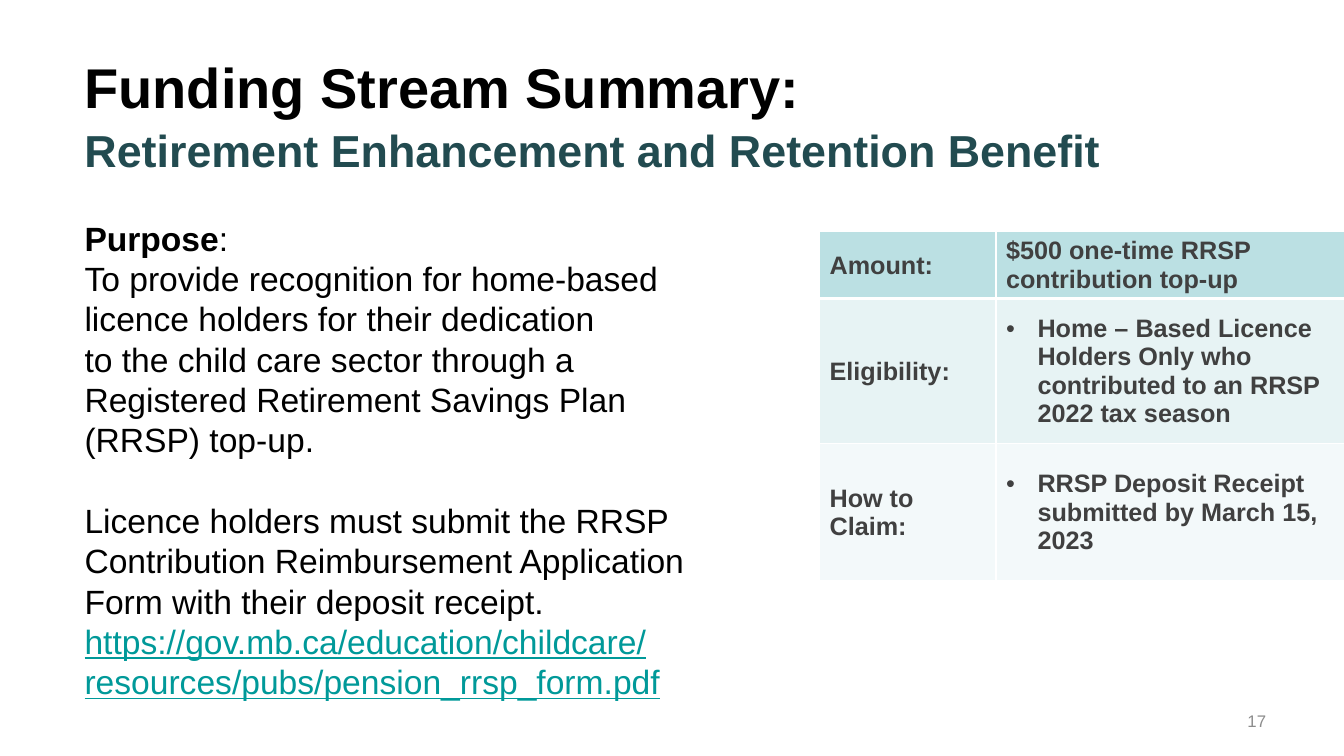
from lxml import etree
from pptx import Presentation
from pptx.dml.color import RGBColor
from pptx.enum.text import MSO_ANCHOR, PP_ALIGN
from pptx.oxml.ns import qn
from pptx.util import Pt

MIDDLE, TOP = MSO_ANCHOR.MIDDLE, MSO_ANCHOR.TOP
LEFT, RIGHT = PP_ALIGN.LEFT, PP_ALIGN.RIGHT
BLANK_LAYOUT = 6
COLORS = {
    "black": "000000",
    "heading": "224B50",
    "link": "009999",
    "table_text": "404040",
    "page_number": "8C8C8C",
    "border": "FFFFFF",
    "top_row": "BBE0E3",
    "odd_row": "E7F3F4",
    "even_row": "F3F9FA",
}


def color(name):
    return RGBColor.from_string(COLORS[name])


def add_text(paragraph, text, size=24, fill="black", bold=False, underline=False):
    """Append text to a paragraph, turning newlines into line breaks."""
    for index, line in enumerate(text.split("\n")):
        if index:
            paragraph.add_line_break()
        if line:
            run = paragraph.add_run()
            run.text = line
            run.font.name = "Arial"
            run.font.size = Pt(size)
            run.font.bold = bold
            run.font.underline = underline
            run.font.color.rgb = color(fill)


def add_bullet(paragraph, indent):
    properties = paragraph._p.get_or_add_pPr()
    properties.set("marL", str(Pt(indent)))
    properties.set("indent", str(-Pt(indent)))
    font = etree.SubElement(properties, qn("a:buFont"))
    font.set("typeface", "Arial")
    etree.SubElement(properties, qn("a:buChar")).set("char", "•")


def add_borders(cell, bottom_width):
    properties = cell._tc.get_or_add_tcPr()
    widths = {"a:lnL": 1, "a:lnR": 1, "a:lnT": 1, "a:lnB": bottom_width}
    for position, (tag, width) in enumerate(widths.items()):
        line = etree.Element(qn(tag), w=str(Pt(width)))
        fill = etree.SubElement(line, qn("a:solidFill"))
        etree.SubElement(fill, qn("a:srgbClr")).set("val", COLORS["border"])
        properties.insert(position, line)


class SlideBuilder:
    def __init__(self, slide):
        self.slide = slide

    def text_box(self, left, top, width, height, paragraphs, anchor=TOP,
                 align=LEFT, line_spacing=None, paragraph_gaps=(), top_inset=3.6):
        """Each paragraph is a list of (text, format) pairs."""
        shape = self.slide.shapes.add_textbox(Pt(left), Pt(top), Pt(width), Pt(height))
        frame = shape.text_frame
        frame.word_wrap = True
        frame.vertical_anchor = anchor
        frame.margin_top = Pt(top_inset)
        for index, parts in enumerate(paragraphs):
            paragraph = frame.add_paragraph() if index else frame.paragraphs[0]
            paragraph.alignment = align
            if line_spacing:
                paragraph.line_spacing = Pt(line_spacing)
            if index and paragraph_gaps:
                paragraph.space_before = Pt(paragraph_gaps[index - 1])
            for text, style in parts:
                add_text(paragraph, text, **style)

    def table(self, left, top, column_widths, row_heights, rows, fills):
        table = self.slide.shapes.add_table(
            len(rows), len(column_widths), Pt(left), Pt(top),
            Pt(sum(column_widths)), Pt(sum(row_heights))).table
        table.first_row = table.horz_banding = False
        for column, width in zip(table.columns, column_widths):
            column.width = Pt(width)
        for row, height in zip(table.rows, row_heights):
            row.height = Pt(height)
        for row_index, texts in enumerate(rows):
            for column_index, text in enumerate(texts):
                cell = table.cell(row_index, column_index)
                cell.fill.solid()
                cell.fill.fore_color.rgb = color(fills[row_index])
                cell.vertical_anchor = MIDDLE
                add_borders(cell, bottom_width=1 if row_index else 3)
                paragraph = cell.text_frame.paragraphs[0]
                paragraph.line_spacing = Pt(20.25)
                if row_index and column_index:
                    add_bullet(paragraph, 22.5)
                add_text(paragraph, text, size=18, fill="table_text", bold=True)


def main():
    presentation = Presentation()
    presentation.slide_width, presentation.slide_height = Pt(960), Pt(540)
    layout = presentation.slide_layouts[BLANK_LAYOUT]
    builder = SlideBuilder(presentation.slides.add_slide(layout))

    purpose = [
        ("Purpose", {"bold": True}),
        (": \nTo provide recognition for home-based licence holders for their "
         "dedication \nto the child care sector through a Registered Retirement "
         "Savings Plan \n(RRSP) top-up.", {}),
    ]
    instructions = [("Licence holders must submit the RRSP Contribution Reimbursement "
                     "Application Form with their deposit receipt.", {})]
    form_address = [("https://gov.mb.ca/education/childcare/resources/pubs/"
                     "pension_rrsp_form.pdf", {"fill": "link", "underline": True})]
    builder.text_box(53.3, 152, 445, 377, [purpose, instructions, form_address],
                     line_spacing=28.8, paragraph_gaps=(28.8, 0))

    builder.text_box(695.5, 500.4, 216, 28.8,
                     [[("17", {"size": 12, "fill": "page_number"})]],
                     anchor=MIDDLE, align=RIGHT)

    title = [
        ("Funding Stream Summary:\n", {"size": 40, "bold": True}),
        ("Retirement Enhancement and Retention Benefit",
         {"size": 32, "bold": True, "fill": "heading"}),
    ]
    builder.text_box(53.3, 33.8, 842.4, 90, [title], line_spacing=40.8, top_inset=11)

    builder.table(
        585.4, 165.6, (126, 249), (47.7, 103.7, 98),
        [("Amount:", "$500 one-time RRSP contribution top-up"),
         ("Eligibility:", "Home – Based Licence Holders Only who contributed "
                          "to an RRSP 2022 tax season"),
         ("How to Claim:", "RRSP Deposit Receipt submitted by March 15, 2023")],
        ("top_row", "odd_row", "even_row"))

    presentation.save("out.pptx")


if __name__ == "__main__":
    main()
